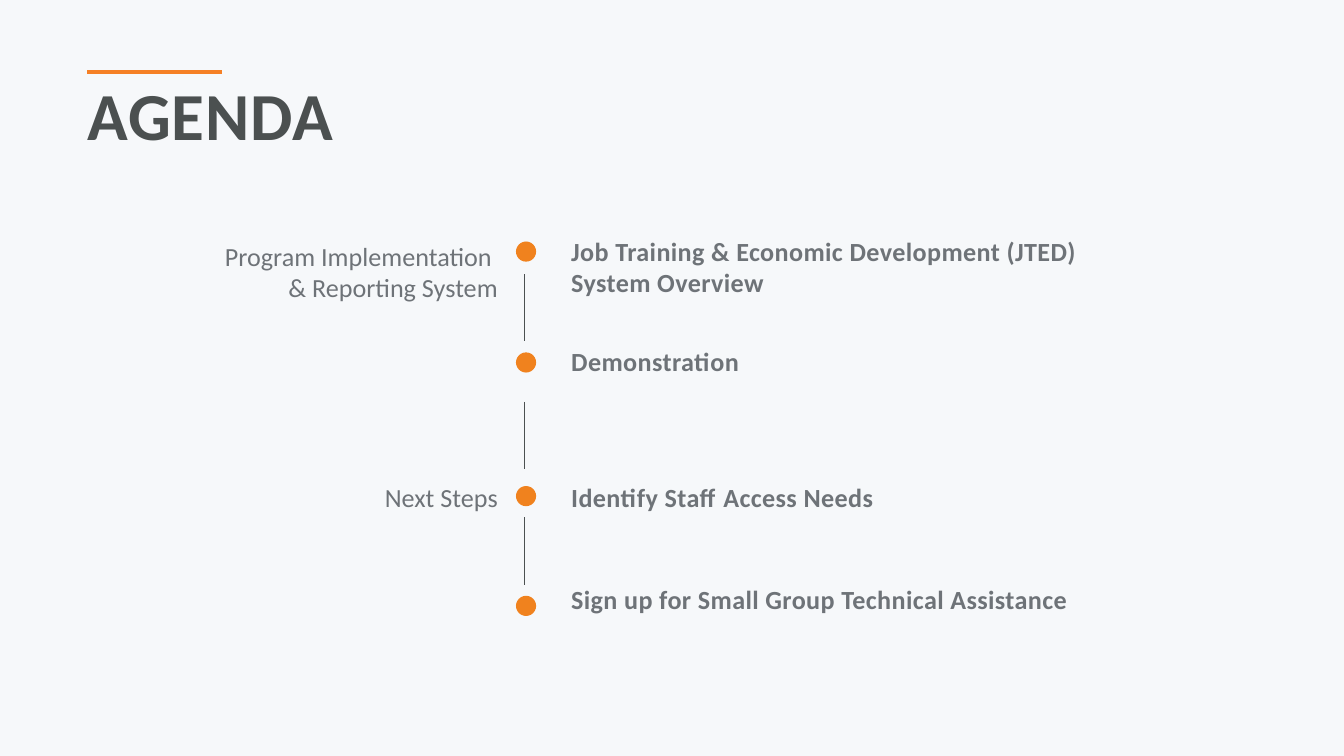
"""Build an agenda slide with a vertical timeline."""
from lxml import etree
from pptx import Presentation
from pptx.dml.color import RGBColor
from pptx.enum.shapes import MSO_CONNECTOR, MSO_SHAPE
from pptx.enum.text import MSO_ANCHOR, MSO_AUTO_SIZE, PP_ALIGN
from pptx.oxml.ns import qn
from pptx.util import Pt

LINE = MSO_CONNECTOR.STRAIGHT
OVAL = MSO_SHAPE.OVAL
LEFT, RIGHT = PP_ALIGN.LEFT, PP_ALIGN.RIGHT
FRAME = {
    "margin_left": 0, "margin_top": 0, "margin_right": 0, "margin_bottom": 0,
    "word_wrap": True, "auto_size": MSO_AUTO_SIZE.NONE,
    "vertical_anchor": MSO_ANCHOR.TOP,
}
TITLE = {"name": "Calibri", "size": Pt(36), "bold": True}
TOPIC = {"name": "Calibri", "size": Pt(14), "bold": True}
PHASE = {"name": "Calibri", "size": Pt(14), "bold": False}
DARK, GREY = "4B5050", "6E7378"
STEPS = [
    (126, 129.4, ["Job Training & Economic Development (JTED)", "System Overview"]),
    (185.2, 188.8, ["Demonstration"]),
    (257.8, 260.4, ["Identify Staff Access Needs"]),
    (312.7, 319.2, ["Sign up for Small Group Technical Assistance"]),
]
PHASES = [
    (128.7, ["Program Implementation ", "& Reporting System"]),
    (257.8, ["Next Steps"]),
]
LINKS = [146.9, 215.3, 277.2]


def paint(color, value):
    """Set a colour format from a hex string."""
    color.rgb = RGBColor.from_string(value)


def apply(target, style):
    """Set each attribute named in a style dict."""
    for name, value in style.items():
        setattr(target, name, value)


def write(frame, rows, style, color, align=LEFT, track=0):
    """Fill a text frame with one paragraph per row."""
    apply(frame, FRAME)
    for i, row in enumerate(rows):
        para = frame.add_paragraph() if i else frame.paragraphs[0]
        para.alignment = align
        run = para.add_run()
        run.text = row
        apply(run.font, style)
        paint(run.font.color, color)
        if track:
            run.font._element.get_or_add_rPr().set("spc", str(track)) if hasattr(
                run.font._element, "get_or_add_rPr"
            ) else run._r.get_or_add_rPr().set("spc", str(track))


def add_title(slide, text):
    """Place and format the slide title."""
    title = slide.shapes.title
    apply(title, {"left": Pt(46.8), "top": Pt(50.4),
                  "width": Pt(626.4), "height": Pt(33.8)})
    write(title.text_frame, [text], TITLE, DARK, track=50)
    title.text_frame.paragraphs[0].line_spacing = Pt(32)


def add_text(slide, left, top, width, rows, *look):
    """Add a text box sized to its rows."""
    box = slide.shapes.add_textbox(Pt(left), Pt(top), Pt(width), Pt(17 * len(rows)))
    write(box.text_frame, rows, *look)


def add_dot(slide, top):
    """Add a timeline dot."""
    dot = slide.shapes.add_shape(OVAL, Pt(276.4), Pt(top), Pt(10.8), Pt(10.8))
    dot.shadow.inherit = False
    dot.fill.solid()
    paint(dot.fill.fore_color, "F0821E")
    dot.line.fill.background()


def add_line(slide, left, top, width, height, color, weight):
    """Add a straight line without a shadow."""
    line = slide.shapes.add_connector(
        LINE, Pt(left), Pt(top), Pt(left + width), Pt(top + height))
    paint(line.line.color, color)
    line.line.width = Pt(weight)
    etree.SubElement(line._element.spPr, qn("a:effectLst"))


def main():
    """Build and save the slide."""
    deck = Presentation()
    deck.slide_width, deck.slide_height = Pt(720), Pt(405)
    slide = deck.slides.add_slide(deck.slide_layouts[5])
    slide.background.fill.solid()
    paint(slide.background.fill.fore_color, "F6F8FA")
    add_line(slide, 46.8, 38.6, 72, 0, "F58025", 2.25)
    add_title(slide, "AGENDA")
    for top, dot, rows in STEPS:
        add_text(slide, 306, top, 354.2, rows, TOPIC, GREY, LEFT, 20)
        add_dot(slide, dot)
    for top in LINKS:
        add_line(slide, 280.9, top, 0, 36, DARK, 0.75)
    for top, rows in PHASES:
        add_text(slide, 46.4, top, 220.4, rows, PHASE, GREY, RIGHT)
    deck.save("out.pptx")


if __name__ == "__main__":
    main()
